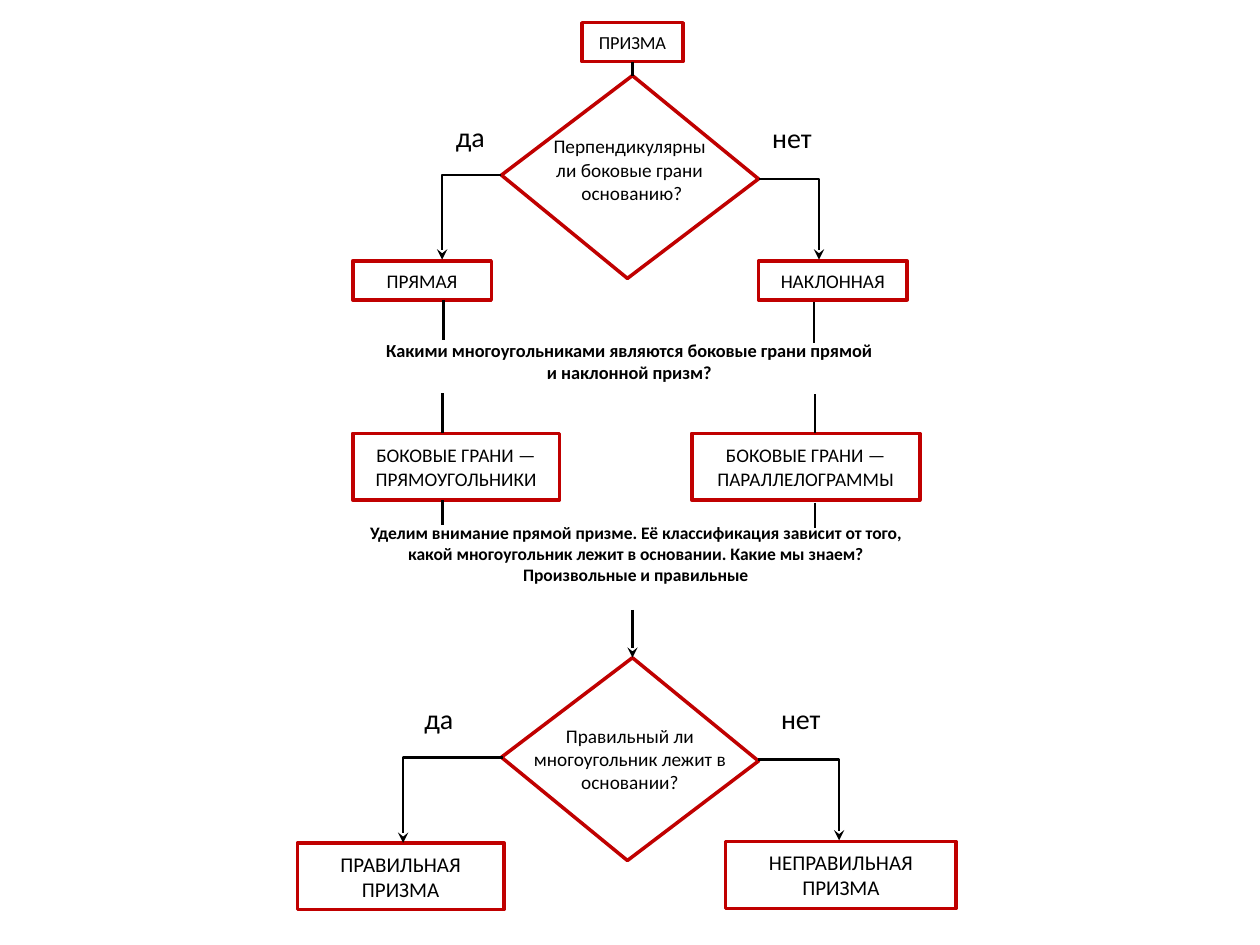
"""Build a one-slide flowchart that classifies prisms."""
import dataclasses

import lxml.etree
import pptx
import pptx.dml.color
import pptx.enum.shapes
import pptx.enum.text
import pptx.oxml.ns
import pptx.util

Inches = pptx.util.Inches
Pt = pptx.util.Pt
qn = pptx.oxml.ns.qn
ALIGN = pptx.enum.text.PP_ALIGN
CONNECTOR = pptx.enum.shapes.MSO_CONNECTOR


@dataclasses.dataclass(frozen=True)
class Theme:
    font: str = "Calibri"
    ink: pptx.dml.color.RGBColor = pptx.dml.color.RGBColor(0, 0, 0)
    border: pptx.dml.color.RGBColor = pptx.dml.color.RGBColor(0xC0, 0, 0)
    border_width: float = 2
    connector_width: float = 1.5
    note: float = 10
    root: float = 10.5
    body: float = 11
    result: float = 12
    answer: float = 16


theme = Theme()


def write(shape, lines, size, bold=False, align=ALIGN.CENTER):
    frame = shape.text_frame
    frame.text = "\n".join(lines)
    for paragraph in frame.paragraphs:
        paragraph.alignment = align
        paragraph.font.name = theme.font
        paragraph.font.size = Pt(size)
        paragraph.font.bold = bold
        paragraph.font.color.rgb = theme.ink


def outline(shape):
    shape.shadow.inherit = False
    shape.fill.background()
    shape.line.color.rgb = theme.border
    shape.line.width = Pt(theme.border_width)
    shape.text_frame.word_wrap = True
    shape.text_frame.vertical_anchor = pptx.enum.text.MSO_ANCHOR.MIDDLE


presentation = pptx.Presentation()
presentation.slide_width = Inches(10)
presentation.slide_height = Inches(7.5)
slide = presentation.slides.add_slide(presentation.slide_layouts[6])
shapes = slide.shapes

boxes = {}
for text, left, top, width, height, size in [
    ("ПРИЗМА", 4.62, 0.18, 0.8, 0.31, theme.root),
    ("ПРЯМАЯ", 2.8, 2.07, 1.1, 0.31, theme.body),
    ("НАКЛОННАЯ", 6.02, 2.07, 1.18, 0.31, theme.body),
    ("БОКОВЫЕ ГРАНИ — ПРЯМОУГОЛЬНИКИ", 2.8, 3.44, 1.64, 0.53, theme.body),
    ("БОКОВЫЕ ГРАНИ — ПАРАЛЛЕЛОГРАММЫ", 5.49, 3.44, 1.81, 0.53, theme.body),
    ("ПРАВИЛЬНАЯ ПРИЗМА", 2.36, 6.69, 1.64, 0.53, theme.result),
    ("НЕПРАВИЛЬНАЯ ПРИЗМА", 5.76, 6.68, 1.83, 0.53, theme.result),
]:
    box = shapes.add_shape(
        pptx.enum.shapes.MSO_SHAPE.RECTANGLE,
        Inches(left), Inches(top), Inches(width), Inches(height))
    outline(box)
    write(box, [text], size)
    boxes[text] = box

decisions = []
for top in (0.6, 5.22):
    builder = shapes.build_freeform(Inches(3.98), Inches(top + 0.79))
    builder.add_line_segments(
        [(Inches(x), Inches(top + drop))
         for x, drop in [(5.02, 0), (6.02, 0.82), (4.98, 1.61)]],
        close=True)
    decision = builder.convert_to_shape()
    outline(decision)
    decisions.append(decision)
write(decisions[1], ["Правильный ли многоугольник лежит в основании?"], theme.body)

links = []
for kind, start_x, start_y, end_x, end_y, arrow in [
    (CONNECTOR.STRAIGHT, 5.02, 0.49, 5.02, 0.6, False),
    (CONNECTOR.STRAIGHT, 3.52, 2.38, 3.52, 2.7, False),
    (CONNECTOR.STRAIGHT, 3.51, 3.12, 3.51, 3.44, False),
    (CONNECTOR.STRAIGHT, 3.51, 3.97, 3.51, 4.17, False),
    (CONNECTOR.STRAIGHT, 6.46, 2.4, 6.46, 2.72, False),
    (CONNECTOR.STRAIGHT, 6.47, 3.13, 6.47, 3.44, False),
    (CONNECTOR.STRAIGHT, 6.47, 3.99, 6.47, 4.19, False),
    (CONNECTOR.STRAIGHT, 5.02, 4.84, 5.02, 5.22, True),
    (CONNECTOR.ELBOW, 6.02, 1.42, 6.5, 2.06, True),
    (CONNECTOR.ELBOW, 3.98, 1.39, 3.51, 2.06, True),
    (CONNECTOR.ELBOW, 6.02, 6.03, 6.66, 6.67, True),
    (CONNECTOR.ELBOW, 3.99, 6.01, 3.2, 6.69, True),
]:
    link = shapes.add_connector(
        kind, Inches(start_x), Inches(start_y), Inches(end_x), Inches(end_y))
    link.line.color.rgb = theme.ink
    link.line.width = Pt(theme.connector_width)
    properties = link._element.spPr
    lxml.etree.SubElement(properties, qn("a:effectLst"))
    if kind == CONNECTOR.ELBOW:
        properties.find(qn("a:prstGeom")).set("prst", "bentConnector2")
    if arrow:
        line = properties.find(qn("a:ln"))
        lxml.etree.SubElement(line, qn("a:tailEnd"), type="stealth")
    links.append(link)
links[0].begin_connect(boxes["ПРИЗМА"], 2)

for lines, left, top, width, height, size, bold in [
    (["Какими многоугольниками являются боковые грани прямой и наклонной призм?"],
     2.95, 2.64, 4.09, 0.45, theme.root, True),
    (["Уделим внимание прямой призме. Её классификация зависит от того, какой "
      "многоугольник лежит в основании. Какие мы знаем? Произвольные и правильные"],
     2.8, 4.09, 4.49, 0.61, theme.note, True),
    (["Перпендикулярны ", "ли боковые грани ", "основанию?"],
     4.04, 1.02, 1.95, 0.66, theme.body, False),
    (["да"], 3.52, 0.9, 0.43, 0.37, theme.answer, False),
    (["нет"], 6.03, 0.91, 0.52, 0.37, theme.answer, False),
    (["да"], 3.27, 5.52, 0.43, 0.37, theme.answer, False),
    (["нет"], 6.1, 5.52, 0.52, 0.37, theme.answer, False),
]:
    is_answer = size == theme.answer
    label = shapes.add_textbox(Inches(left), Inches(top), Inches(width), Inches(height))
    label.text_frame.word_wrap = not is_answer
    label.text_frame.auto_size = pptx.enum.text.MSO_AUTO_SIZE.SHAPE_TO_FIT_TEXT
    write(label, lines, size, bold, ALIGN.LEFT if is_answer else ALIGN.CENTER)

presentation.save("out.pptx")
